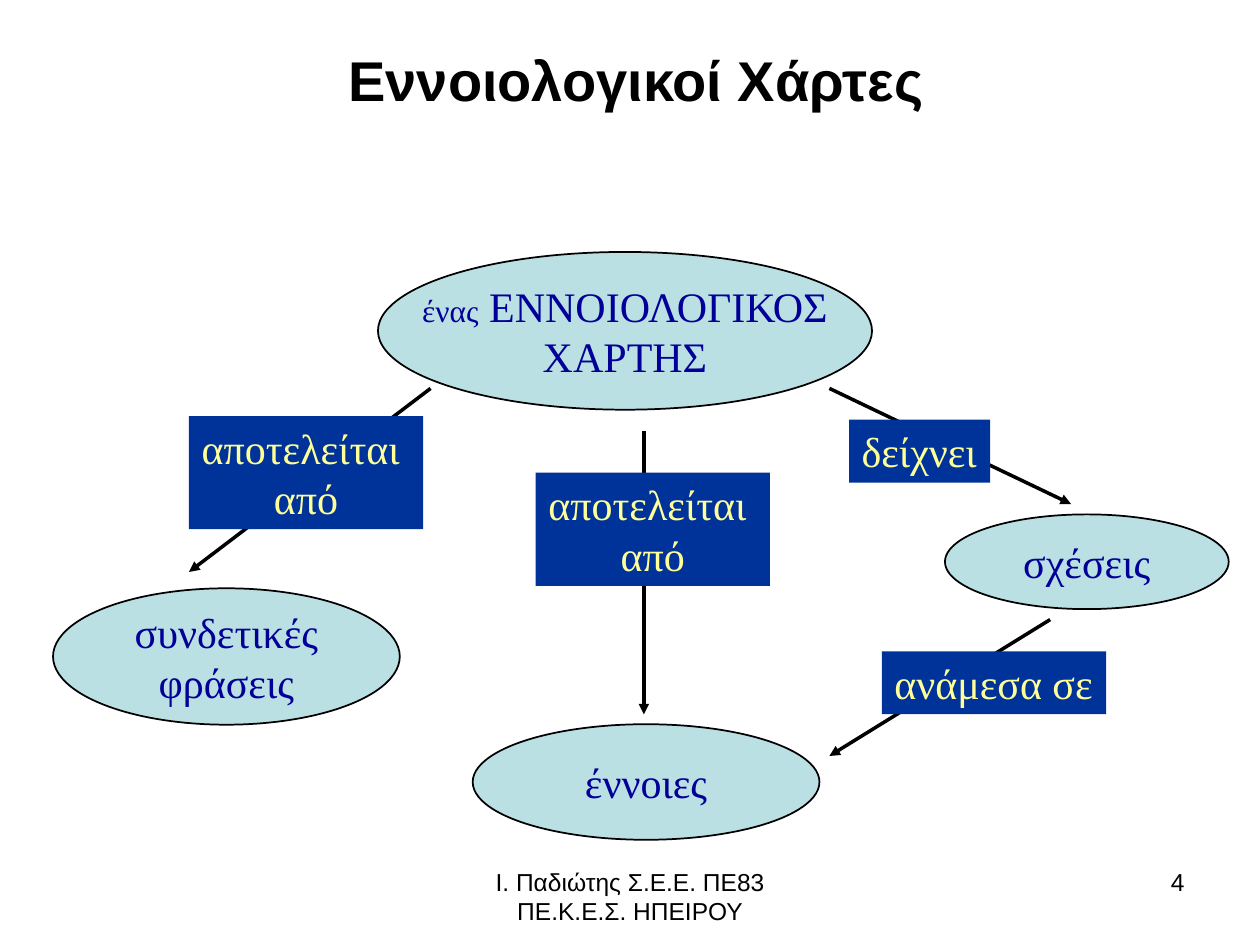
import pptx
import pptx.util
import pptx.dml.color
import pptx.enum.shapes
import pptx.enum.text
from lxml import etree

Cm, Pt = pptx.util.Cm, pptx.util.Pt
KIND = pptx.enum.shapes.MSO_SHAPE
ALIGN = pptx.enum.text.PP_ALIGN
ANCHOR = pptx.enum.text.MSO_ANCHOR
FIT = pptx.enum.text.MSO_AUTO_SIZE

# Content: "\n" starts a paragraph, "\v" breaks a line, "|" ends a small lead word
COLORS = {"ink": "000000", "node": "BBE0E3", "name": "000099",
          "label": "003399", "word": "FFFF99"}
SANS, SERIF = "Arial", "Times New Roman"
LEAD = 18

# text, box in cm (left, top, width, height)
NODES = [
    ("ένας| ΕΝΝΟΙΟΛΟΓΙΚΟΣ\nΧΑΡΤΗΣ", (7.62, 5.08, 9.96, 3.18)),
    ("έννοιες", (9.53, 14.6, 6.99, 2.33)),
    ("συνδετικές\vφράσεις", (1.07, 11.86, 6.99, 2.75)),
    ("σχέσεις", (19.05, 10.37, 5.72, 1.91)),
]
LABELS = [
    ("αποτελείται \vαπό", (10.8, 9.53, 4.72, 2.28), ALIGN.CENTER),
    ("δείχνει", (17.12, 8.46, 2.84, 1.27), ALIGN.LEFT),
    ("ανάμεσα σε", (17.78, 13.13, 4.52, 1.27), ALIGN.LEFT),
    ("αποτελείται \vαπό", (3.81, 8.39, 4.72, 2.28), ALIGN.CENTER),
]
# from x, y to x, y in cm
ARROWS = [
    (12.98, 8.68, 12.98, 14.4),
    (21.17, 12.49, 16.72, 15.24),
    (16.72, 7.83, 21.59, 10.16),
    (8.68, 7.83, 3.81, 11.53),
]
# text, box, size, bold, align, anchor
TEXTS = [
    ("Εννοιολογικοί Χάρτες", (1.4, 0, 22.86, 3.18), 32, True,
     ALIGN.CENTER, ANCHOR.MIDDLE),
    ("Ι. Παδιώτης Σ.Ε.Ε. ΠΕ83 ΠΕ.Κ.Ε.Σ. ΗΠΕΙΡΟΥ",
     (8.68, 17.35, 8.05, 1.32), 14, False, ALIGN.CENTER, ANCHOR.TOP),
    ("4", (18.21, 17.35, 5.92, 1.32), 14, False, ALIGN.RIGHT, ANCHOR.TOP),
]


def color(key):
    return pptx.dml.color.RGBColor.from_string(COLORS[key])


def write(shape, text, size, font, ink, align, anchor, wrap, bold=False):
    frame = shape.text_frame
    frame.auto_size = FIT.NONE
    frame.word_wrap = wrap
    frame.vertical_anchor = anchor
    for i, line in enumerate(text.split("\n")):
        para = frame.add_paragraph() if i else frame.paragraphs[0]
        first, _, rest = line.partition("|")
        para.text = first
        para.alignment = align
        if rest:
            para.add_run().text = rest
        for run in para.runs:
            run.font.size = Pt(size)
            run.font.name = font
            run.font.bold = bold
            run.font.color.rgb = color(ink)
        if rest:
            para.runs[0].font.size = Pt(LEAD)


def block(slide, kind, box, fill):
    shape = slide.shapes.add_shape(kind, *map(Cm, box))
    shape.shadow.inherit = False
    shape.fill.solid()
    shape.fill.fore_color.rgb = color(fill)
    return shape


def arrow(slide, ends):
    link = slide.shapes.add_connector(
        pptx.enum.shapes.MSO_CONNECTOR.STRAIGHT, *map(Cm, ends))
    link.line.color.rgb = color("ink")
    link.line.width = Pt(2)
    tag = pptx.oxml.ns.qn
    etree.SubElement(link.line._get_or_add_ln(), tag("a:tailEnd"),
                     type="triangle")
    etree.SubElement(link._element.spPr, tag("a:effectLst"))


def main():
    deck = pptx.Presentation()
    deck.slide_width, deck.slide_height = Cm(25.4), Cm(19.05)
    slide = deck.slides.add_slide(deck.slide_layouts[6])

    # Title, footer and page number
    for text, box, size, bold, align, anchor in TEXTS:
        area = slide.shapes.add_textbox(*map(Cm, box))
        write(area, text, size, SANS, "ink", align, anchor, True, bold)

    # Arrows lie under the nodes and labels
    for ends in ARROWS:
        arrow(slide, ends)

    # Concept nodes
    for text, box in NODES:
        node = block(slide, KIND.OVAL, box, "node")
        node.line.color.rgb = color("ink")
        node.line.width = Pt(1)
        write(node, text, 24, SERIF, "name", ALIGN.CENTER, ANCHOR.MIDDLE, False)

    # Linking phrases
    for text, box, align in LABELS:
        label = block(slide, KIND.RECTANGLE, box, "label")
        label.line.fill.background()
        write(label, text, 24, SERIF, "word", align, ANCHOR.TOP, False)

    deck.save("out.pptx")


if __name__ == "__main__":
    main()
